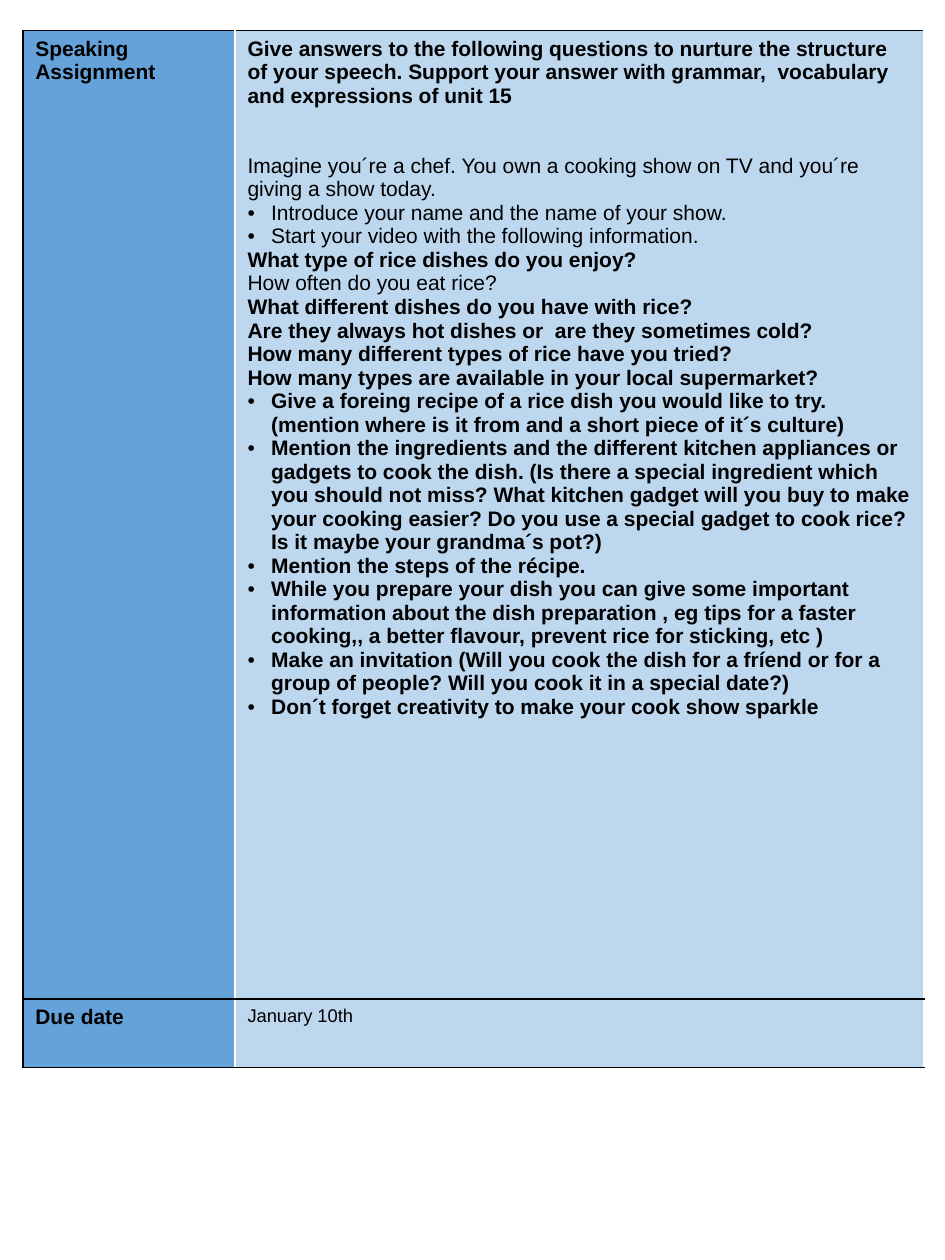
import pptx
import pptx.dml.color
import pptx.oxml
import pptx.oxml.ns
import pptx.util
from lxml import etree

Pt = pptx.util.Pt
qn = pptx.oxml.ns.qn

COLORS = {"text": "000000", "label": "65A2D9", "content": "BDD7EE",
          "rule": "000000", "divider": "FFFFFF"}

# Each paragraph: text, bold, bulleted, space before in points
ASSIGNMENT = [
    ("Give answers to the following questions to nurture the structure of your speech. "
     "Support your answer with grammar,  vocabulary and expressions of unit 15", True, False, 0),
    ("Imagine you´re a chef. You own a cooking show on TV and you´re giving a show today.",
     False, False, 26.8),
    ("Introduce your name and the name of your show.", False, True, 0),
    ("Start your video with the following information.", False, True, 0),
    ("What type of rice dishes do you enjoy?", True, False, 0),
    ("How often do you eat rice?", False, False, 0),
    ("What different dishes do you have with rice?", True, False, 0),
    ("Are they always hot dishes or  are they sometimes cold?", True, False, 0),
    ("How many different types of rice have you tried?", True, False, 0),
    ("How many types are available in your local supermarket?", True, False, 0),
    ("Give a foreing recipe of a rice dish you would like to try. "
     "(mention where is it from and a short piece of it´s culture)", True, True, 0),
    ("Mention the ingredients and the different kitchen appliances or gadgets to cook the dish. "
     "(Is there a special ingredient which you should not miss? What kitchen gadget will you buy "
     "to make your cooking easier? Do you use a special gadget to cook rice? "
     "Is it maybe your grandma´s pot?)", True, True, 0),
    ("Mention the steps of the récipe.", True, True, 0),
    ("While you prepare your dish you can give some important information about the dish "
     "preparation , eg tips for a faster cooking,, a better flavour, "
     "prevent rice for sticking, etc )", True, True, 0),
    ("Make an invitation (Will you cook the dish for a fríend or for a group of people? "
     "Will you cook it in a special date?)", True, True, 0),
    ("Don´t forget creativity to make your cook show sparkle", True, True, 0),
]


class SlideBuilder:
    font = "Arial"
    indent = Pt(13.5)

    def __init__(self, prs):
        self.s = prs.slides.add_slide(prs.slide_layouts[6])

    def rgb(self, name):
        return pptx.dml.color.RGBColor.from_string(COLORS[name])

    def table(self, left, top, widths, heights):
        frame = self.s.shapes.add_table(len(heights), len(widths), Pt(left), Pt(top),
                                        Pt(sum(widths)), Pt(sum(heights)))
        table = frame.table
        table.first_row = table.horz_banding = False
        for column, width in zip(table.columns, widths):
            column.width = Pt(width)
        for row, height in zip(table.rows, heights):
            row.height = Pt(height)
        return table

    def cell(self, cell, fill, left_border, paragraphs, size=12):
        borders = {"L": left_border, "R": "divider", "T": "rule", "B": "rule"}
        for side, color in borders.items():
            self.border(cell, side, color)
        cell.fill.solid()
        cell.fill.fore_color.rgb = self.rgb(fill)
        tf = cell.text_frame
        for i, paragraph in enumerate(paragraphs):
            p = tf.add_paragraph() if i else tf.paragraphs[0]
            self.paragraph(p, size, *paragraph)

    def border(self, cell, side, color):
        tc_pr = cell._tc.get_or_add_tcPr()
        line = etree.SubElement(tc_pr, qn(f"a:ln{side}"), w=str(Pt(1)))
        fill = etree.SubElement(line, qn("a:solidFill"))
        etree.SubElement(fill, qn("a:srgbClr"), val=COLORS[color])

    def paragraph(self, p, size, text, bold, bulleted=False, before=0):
        p.text = text
        if before:
            p.space_before = Pt(before)
        if bulleted:
            p_pr = p._p.get_or_add_pPr()
            p_pr.set("marL", str(self.indent))
            p_pr.set("indent", str(-self.indent))
            etree.SubElement(p_pr, qn("a:buFont"), typeface=self.font)
            etree.SubElement(p_pr, qn("a:buChar"), char="•")
        p.font.name = self.font
        p.font.size = Pt(size)
        p.font.bold = bold
        p.font.color.rgb = self.rgb("text")


def main():
    prs = pptx.Presentation()
    prs.slide_width, prs.slide_height = Pt(540), Pt(720)
    slide = SlideBuilder(prs)
    table = slide.table(13, 17.5, widths=[121.25, 393.75], heights=[553.5, 39])
    rows = [("Speaking Assignment", ASSIGNMENT, 12),
            ("Due date", [("January 10th", False)], 10.5)]
    for i, (label, content, size) in enumerate(rows):
        slide.cell(table.cell(i, 0), "label", "rule", [(label, True)])
        slide.cell(table.cell(i, 1), "content", "divider", content, size)
    prs.save("out.pptx")


if __name__ == "__main__":
    main()
